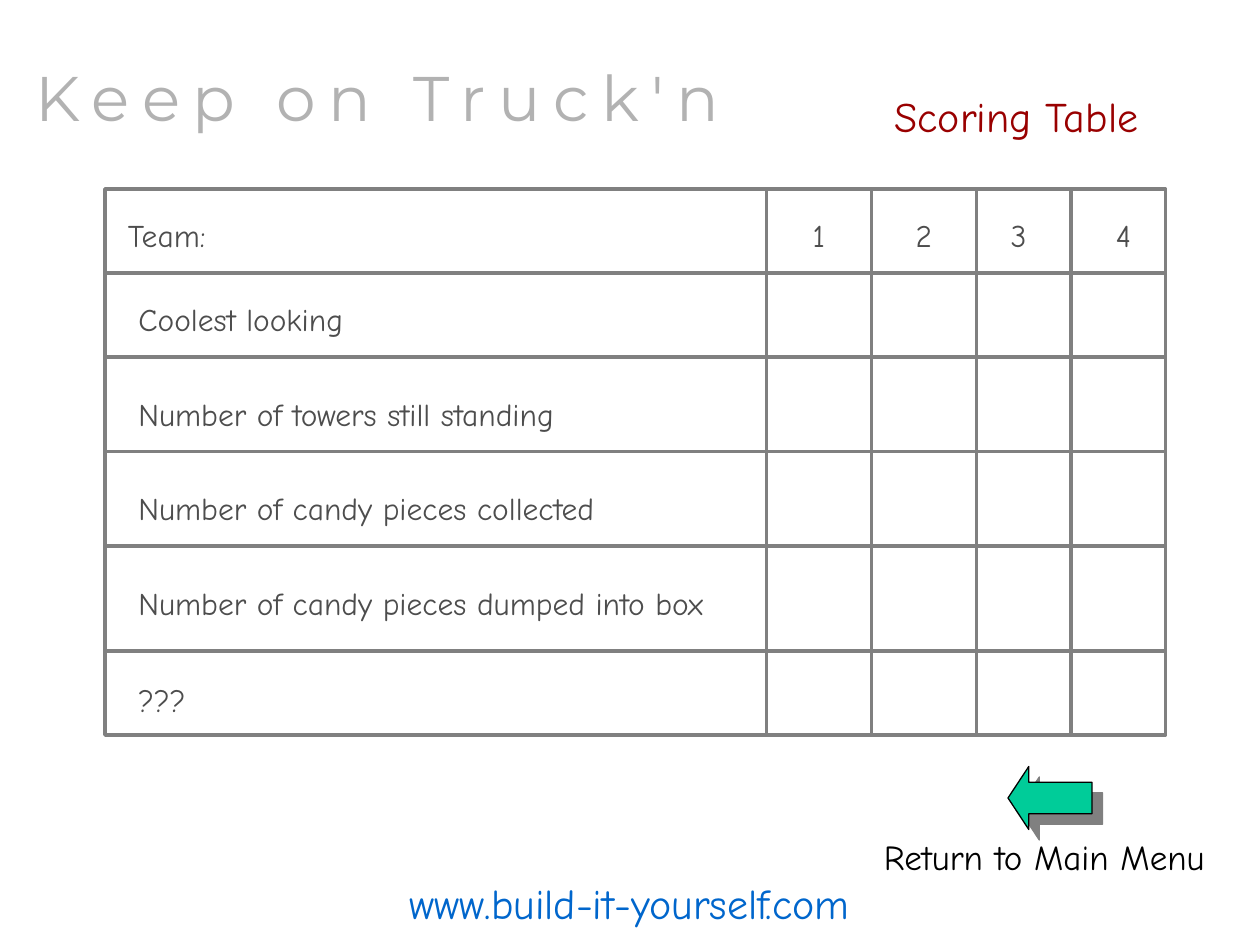
from dataclasses import dataclass
from lxml.etree import SubElement
from pptx import Presentation
from pptx.dml.color import RGBColor
from pptx.enum.shapes import MSO_CONNECTOR, MSO_SHAPE
from pptx.enum.text import MSO_AUTO_SIZE, PP_ALIGN
from pptx.oxml.ns import qn
from pptx.shapes.autoshape import Shape
from pptx.shapes.shapetree import SlideShapes
from pptx.text.text import _Run
from pptx.util import Emu, Pt

EMU_PER_PX = 9525


@dataclass(frozen=True)
class Theme:
    body_font: str = "Comic Neue"
    title_font: str = "Montserrat"
    title_size: int = 36
    heading_size: int = 24
    menu_size: int = 20
    cell_size: int = 18
    title_top: str = "B2B2B2"
    title_bottom: str = "4D4D4D"
    cell_text: str = "4D4D4D"
    heading: str = "990000"
    link: str = "0066CC"
    grid: str = "808080"
    arrow: str = "00CC99"
    shadow: str = "808080"
    black: str = "000000"
    grid_width: float = 2
    arrow_outline: float = 0.75


THEME = Theme()


@dataclass(frozen=True)
class Box:
    left: int
    top: int
    width: int
    height: int

    def emu(self) -> tuple[Emu, Emu, Emu, Emu]:
        return px(self.left), px(self.top), px(self.width), px(self.height)


@dataclass(frozen=True)
class Label:
    text: str
    box: Box
    size: int = THEME.cell_size
    color: str = THEME.cell_text
    font: str = THEME.body_font
    centered: bool = False
    wrap: bool = True
    grow: bool = True


def px(length: int) -> Emu:
    return Emu(length * EMU_PER_PX)


def rgb(color: str) -> RGBColor:
    return RGBColor.from_string(color)


def add_label(shapes: SlideShapes, label: Label) -> _Run:
    frame = shapes.add_textbox(*label.box.emu()).text_frame
    frame.word_wrap = label.wrap
    frame.auto_size = MSO_AUTO_SIZE.SHAPE_TO_FIT_TEXT if label.grow else MSO_AUTO_SIZE.NONE
    paragraph = frame.paragraphs[0]
    paragraph.alignment = PP_ALIGN.CENTER if label.centered else PP_ALIGN.LEFT
    run = paragraph.add_run()
    run.text = label.text
    run.font.name = label.font
    run.font.size = Pt(label.size)
    run.font.color.rgb = rgb(label.color)
    return run


def style_title(run: _Run) -> None:
    fill = run.font.fill
    fill.gradient()
    fill.gradient_angle = 270
    for stop, color, position in zip(
        fill.gradient_stops, (THEME.title_top, THEME.title_bottom), (0, 1)
    ):
        stop.color.rgb = rgb(color)
        stop.position = position
    run._r.get_or_add_rPr().set("spc", "720")


def add_lines(shapes: SlideShapes, ends: list[tuple[int, int, int, int]]) -> None:
    group = shapes.add_group_shape()
    for end in ends:
        line = group.shapes.add_connector(MSO_CONNECTOR.STRAIGHT, *map(px, end))
        line.line.color.rgb = rgb(THEME.grid)
        line.line.width = Pt(THEME.grid_width)
        SubElement(line._element.spPr, qn("a:effectLst"))


def add_frame(shapes: SlideShapes, box: Box) -> None:
    frame = shapes.add_shape(MSO_SHAPE.RECTANGLE, *box.emu())
    frame.shadow.inherit = False
    frame.fill.background()
    frame.line.color.rgb = rgb(THEME.grid)
    frame.line.width = Pt(THEME.grid_width)


def add_hard_shadow(shape: Shape) -> None:
    shape.shadow.inherit = False
    effects = shape._element.spPr.find(qn("a:effectLst"))
    shadow = SubElement(
        effects, qn("a:outerShdw"), blurRad="0", dist=str(Pt(8.5)),
        dir="2700000", algn="ctr", rotWithShape="0",
    )
    SubElement(shadow, qn("a:srgbClr"), val=THEME.shadow)


def add_return_arrow(shapes: SlideShapes, box: Box) -> None:
    arrow = shapes.add_shape(MSO_SHAPE.LEFT_ARROW, *box.emu())
    arrow.adjustments[0] = 0.5
    arrow.adjustments[1] = 0.33
    arrow.fill.solid()
    arrow.fill.fore_color.rgb = rgb(THEME.arrow)
    arrow.line.color.rgb = rgb(THEME.black)
    arrow.line.width = Pt(THEME.arrow_outline)
    add_hard_shadow(arrow)


TABLE = Box(80, 144, 808, 416)
ROW_LINES = (208, 272, 344, 416, 496)
COLUMN_LINES = (584, 664, 744, 816)
TEAM_LEFTS = (600, 680, 752, 832)
CELL_HEIGHT = 38
HEADER_TOP = 160
CRITERIA = (
    ("Coolest looking", 224),
    ("Number of towers still standing", 296),
    ("Number of candy pieces collected", 368),
    ("Number of candy pieces dumped into box", 440),
    ("???", 514),
)
TITLE = Label(
    "Keep on Truck'n", Box(80, 40, 416, 72), THEME.title_size, THEME.title_top,
    THEME.title_font, centered=True, wrap=False, grow=False,
)
CAPTIONS = (
    Label("www.build-it-yourself.com", Box(277, 664, 405, 48), THEME.heading_size,
          THEME.link, centered=True, wrap=False),
    Label("Return to Main Menu", Box(664, 632, 279, 41), THEME.menu_size,
          THEME.black, wrap=False),
    Label("Scoring Table", Box(672, 64, 226, 48), THEME.heading_size,
          THEME.heading, wrap=False),
)


def add_scoring_grid(shapes: SlideShapes) -> None:
    right, bottom = TABLE.left + TABLE.width, TABLE.top + TABLE.height
    add_frame(shapes, TABLE)
    add_lines(shapes, [(TABLE.left, y, right, y) for y in ROW_LINES])
    add_lines(shapes, [(x, TABLE.top, x, bottom) for x in COLUMN_LINES])
    add_label(shapes, Label("Team:", Box(88, HEADER_TOP, 488, CELL_HEIGHT)))
    for text, top in CRITERIA:
        add_label(shapes, Label(text, Box(96, top, 480, CELL_HEIGHT)))
    for team, left in enumerate(TEAM_LEFTS, start=1):
        box = Box(left, HEADER_TOP, 48, CELL_HEIGHT)
        add_label(shapes, Label(str(team), box, centered=True))


def main() -> None:
    presentation = Presentation()
    presentation.slide_width, presentation.slide_height = px(960), px(720)
    slide = presentation.slides.add_slide(presentation.slide_layouts[6])
    style_title(add_label(slide.shapes, TITLE))
    add_return_arrow(slide.shapes, Box(768, 584, 64, 48))
    for caption in CAPTIONS:
        add_label(slide.shapes, caption)
    add_scoring_grid(slide.shapes)
    presentation.save("out.pptx")


if __name__ == "__main__":
    main()
